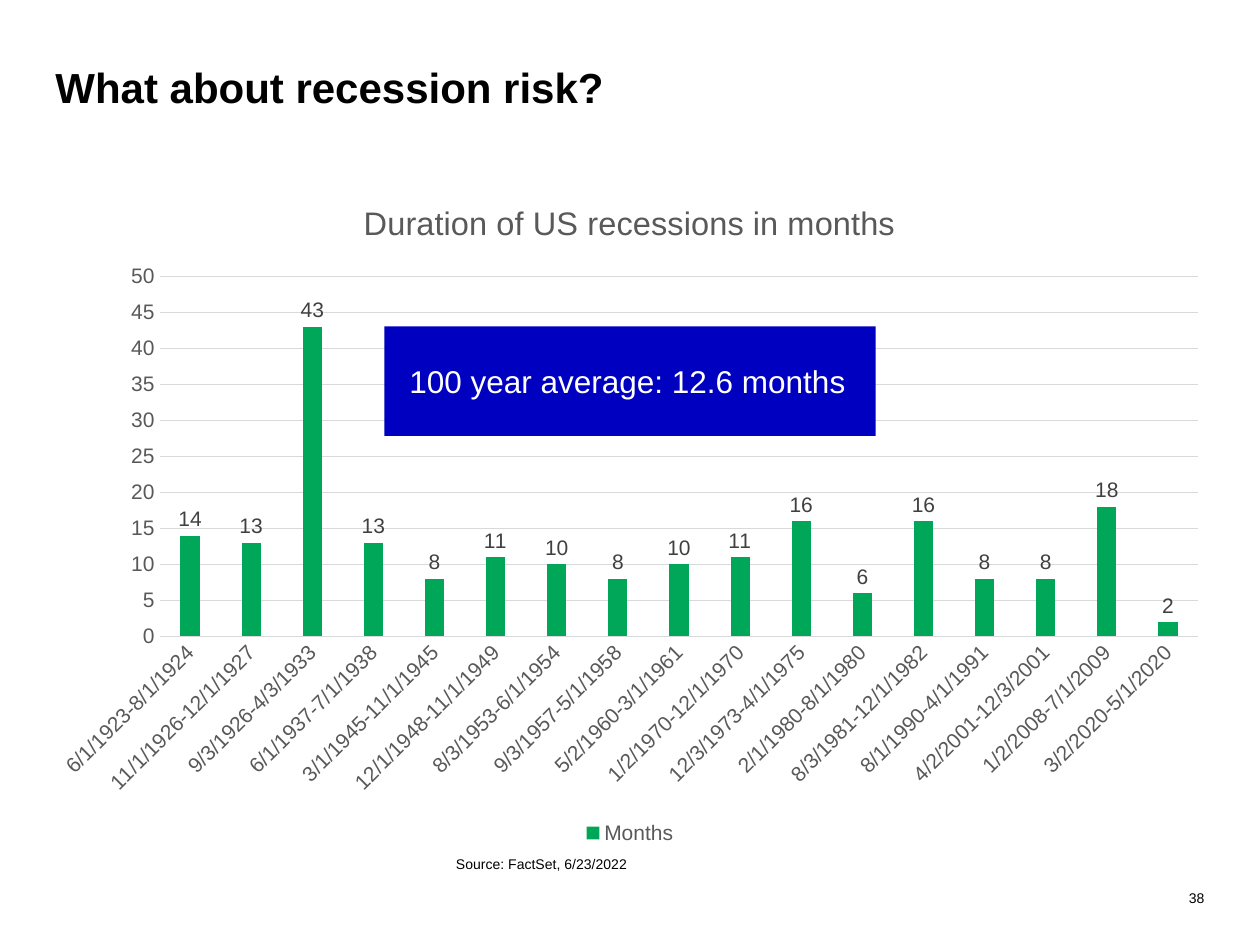
from pptx import Presentation
from pptx.chart.data import CategoryChartData
from pptx.dml.color import RGBColor
from pptx.enum.chart import XL_CHART_TYPE, XL_LABEL_POSITION, XL_LEGEND_POSITION, XL_TICK_MARK
from pptx.enum.shapes import MSO_SHAPE
from pptx.enum.text import MSO_ANCHOR, PP_ALIGN
from pptx.util import Inches, Pt

COLUMNS = XL_CHART_TYPE.COLUMN_CLUSTERED
ABOVE_BAR = XL_LABEL_POSITION.OUTSIDE_END
LEGEND_BOTTOM = XL_LEGEND_POSITION.BOTTOM
NO_TICK = XL_TICK_MARK.NONE
RECTANGLE = MSO_SHAPE.RECTANGLE
TOP, MIDDLE, BOTTOM = MSO_ANCHOR.TOP, MSO_ANCHOR.MIDDLE, MSO_ANCHOR.BOTTOM
LEFT, RIGHT = PP_ALIGN.LEFT, PP_ALIGN.RIGHT

FONT = "Arial"
COLORS = {
    "text": "000000",
    "axis": "595959",
    "value": "404040",
    "grid": "D9D9D9",
    "bar": "00A758",
    "callout": "0000C1",
    "callout_text": "FFFFFF",
}

TITLE = "What about recession risk?"
CHART_TITLE = "Duration of US recessions in months"
CALLOUT = "100 year average: 12.6 months"
SOURCE = "Source: FactSet, 6/23/2022"
PAGE_NUMBER = "38"
SERIES_NAME = "Months"
RECESSIONS = [
    ("6/1/1923-8/1/1924", 14),
    ("11/1/1926-12/1/1927", 13),
    ("9/3/1926-4/3/1933", 43),
    ("6/1/1937-7/1/1938", 13),
    ("3/1/1945-11/1/1945", 8),
    ("12/1/1948-11/1/1949", 11),
    ("8/3/1953-6/1/1954", 10),
    ("9/3/1957-5/1/1958", 8),
    ("5/2/1960-3/1/1961", 10),
    ("1/2/1970-12/1/1970", 11),
    ("12/3/1973-4/1/1975", 16),
    ("2/1/1980-8/1/1980", 6),
    ("8/3/1981-12/1/1982", 16),
    ("8/1/1990-4/1/1991", 8),
    ("4/2/2001-12/3/2001", 8),
    ("1/2/2008-7/1/2009", 18),
    ("3/2/2020-5/1/2020", 2),
]


def rgb(name):
    return RGBColor.from_string(COLORS[name])


def style_font(font, size, color, bold=False):
    font.name = FONT
    font.size = Pt(size)
    font.bold = bold
    font.color.rgb = rgb(color)


def write(shape, text, size, color="text", bold=False, align=LEFT,
          anchor=TOP, margins=(0, 0), spacing=None):
    frame = shape.text_frame
    frame.word_wrap = True
    frame.vertical_anchor = anchor
    frame.margin_left = frame.margin_right = Inches(margins[0])
    frame.margin_top = frame.margin_bottom = Inches(margins[1])
    paragraph = frame.paragraphs[0]
    paragraph.alignment = align
    paragraph.line_spacing = spacing
    run = paragraph.add_run()
    run.text = text
    style_font(run.font, size, color, bold)


def add_recession_chart(slide, box):
    data = CategoryChartData()
    data.categories = [period for period, _ in RECESSIONS]
    data.add_series(SERIES_NAME, [months for _, months in RECESSIONS])
    chart = slide.shapes.add_chart(COLUMNS, *box, data).chart
    style_font(chart.font, 10, "text")

    chart.has_title = True
    heading = chart.chart_title.text_frame.paragraphs[0].add_run()
    heading.text = CHART_TITLE
    style_font(heading.font, 18.6, "axis")
    chart.chart_title.include_in_layout = False

    chart.has_legend = True
    chart.legend.position = LEGEND_BOTTOM
    chart.legend.include_in_layout = False
    style_font(chart.legend.font, 12, "axis")

    periods, months = chart.category_axis, chart.value_axis
    for axis in (periods, months):
        axis.major_tick_mark = axis.minor_tick_mark = NO_TICK
        style_font(axis.tick_labels.font, 12, "axis")
    periods._element.txPr.bodyPr.set("rot", "-2700000")
    months.minimum_scale, months.maximum_scale, months.major_unit = 0, 50, 5
    months.format.line.fill.background()
    for line in (periods.format.line, months.major_gridlines.format.line):
        line.color.rgb = rgb("grid")
        line.width = Pt(0.75)

    plot = chart.plots[0]
    plot.gap_width = 219
    plot.vary_by_categories = False
    bars = plot.series[0]
    bars.format.fill.solid()
    bars.format.fill.fore_color.rgb = rgb("bar")
    labels = bars.data_labels
    labels.show_value = True
    labels.position = ABOVE_BAR
    style_font(labels.font, 12, "value")


def main():
    deck = Presentation()
    deck.slide_width, deck.slide_height = Inches(10), Inches(7.5)
    slide = deck.slides.add_slide(deck.slide_layouts[6])

    def box(*lengths):
        return [Inches(length) for length in lengths]

    title = slide.shapes.add_textbox(*box(0.44, 0.52, 9.13, 0.87))
    write(title, TITLE, 24, bold=True, spacing=0.95)

    page_number = slide.shapes.add_textbox(*box(9.33, 7, 0.23, 0.19))
    write(page_number, PAGE_NUMBER, 8, align=RIGHT, anchor=BOTTOM)

    add_recession_chart(slide, box(0.3, 1.39, 9.4, 5.35))

    source = slide.shapes.add_textbox(*box(3.52, 6.75, 5.62, 0.44))
    write(source, SOURCE, 8, margins=(0.1, 0.05), spacing=0.95)

    callout = slide.shapes.add_shape(RECTANGLE, *box(3.05, 2.59, 3.9, 0.87))
    callout.shadow.inherit = False
    callout.fill.solid()
    callout.fill.fore_color.rgb = rgb("callout")
    callout.line.fill.background()
    write(callout, CALLOUT, 18, color="callout_text", anchor=MIDDLE, margins=(0.2, 0.05))

    deck.save("out.pptx")


if __name__ == "__main__":
    main()
